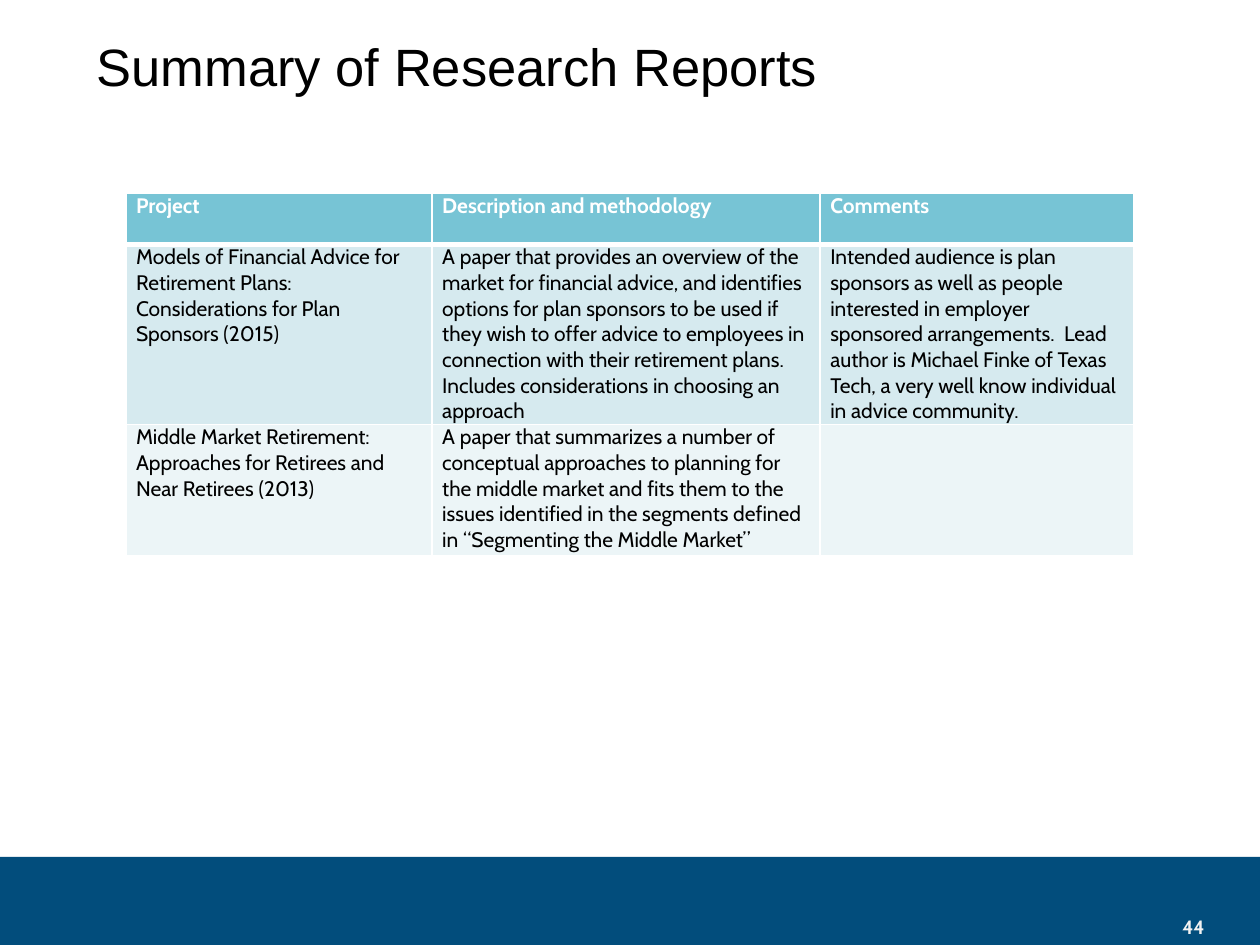
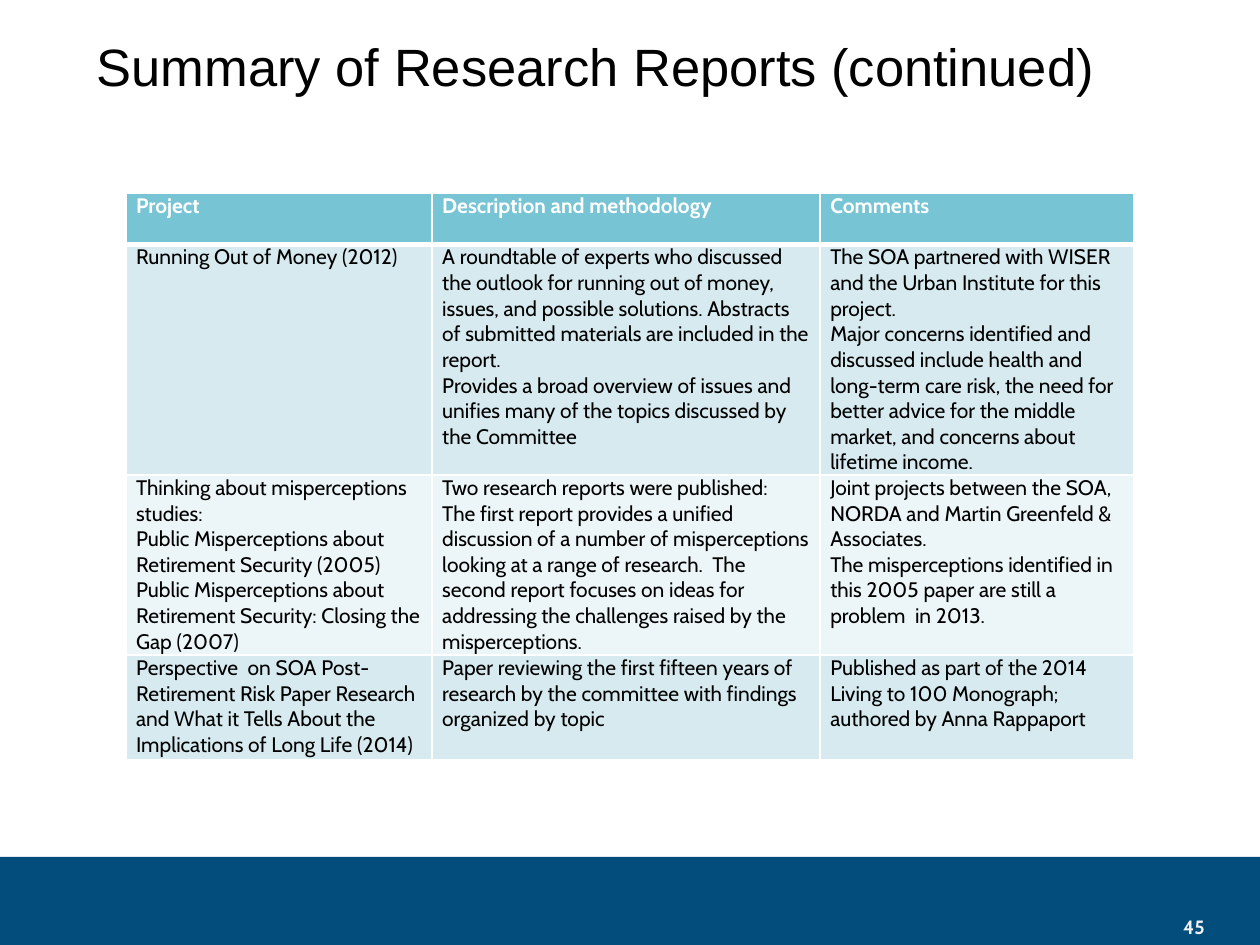
from lxml import etree
from pptx import Presentation
from pptx.dml.color import RGBColor
from pptx.enum.shapes import MSO_SHAPE
from pptx.enum.text import MSO_ANCHOR, PP_ALIGN
from pptx.oxml.ns import qn
from pptx.util import Inches, Pt

RECTANGLE = MSO_SHAPE.RECTANGLE
TOP, MIDDLE, BOTTOM = MSO_ANCHOR.TOP, MSO_ANCHOR.MIDDLE, MSO_ANCHOR.BOTTOM
LEFT, RIGHT = PP_ALIGN.LEFT, PP_ALIGN.RIGHT

BLACK = RGBColor(0x00, 0x00, 0x00)
WHITE = RGBColor(0xFF, 0xFF, 0xFF)
PALE_GRAY = RGBColor(0xF2, 0xF2, 0xF2)
NAVY = RGBColor(0x02, 0x4D, 0x7C)
TEAL = RGBColor(0x77, 0xC4, 0xD5)
BANDS = [RGBColor(0xD6, 0xEA, 0xEF), RGBColor(0xEC, 0xF5, 0xF7)]

TITLE_FONT = "Arial"
BODY_FONT = "Cabin"
COLUMN_WIDTHS = [2.43, 3.08, 2.49]
HEADER_HEIGHT = 0.41
HEADINGS = ["Project", "Description and methodology", "Comments"]

REPORT_PAGES = [
    ("Summary of Research Reports", 44, [
        (1.43, [
            ["Models of Financial Advice for Retirement Plans: Considerations for Plan Sponsors (2015)"],
            ["A paper that provides an overview of the market for financial advice, and identifies "
             "options for plan sponsors to be used if they wish to offer advice to employees in "
             "connection with their retirement plans.  Includes considerations in choosing an approach"],
            ["Intended audience is plan sponsors as well as people interested in employer sponsored "
             "arrangements.  Lead author is Michael Finke of Texas Tech, a very well know individual "
             "in advice community."],
        ]),
        (1.04, [
            ["Middle Market Retirement: Approaches for Retirees and Near Retirees (2013)"],
            ["A paper that summarizes a number of conceptual approaches to planning for the middle "
             "market and fits them to the issues identified in the segments defined in “Segmenting "
             "the Middle Market”"],
            [],
        ]),
    ]),
    ("Summary of Research Reports (continued)", 45, [
        (1.83, [
            ["Running Out of Money (2012)"],
            ["A roundtable of experts who discussed the outlook for running out of money, issues, and "
             "possible solutions. Abstracts of submitted materials are included in the report.",
             "Provides a broad overview of issues and unifies many of the topics discussed by the "
             "Committee"],
            ["The SOA partnered with WISER and the Urban Institute for this project.",
             "Major concerns identified and discussed include health and long-term care risk, the need "
             "for better advice for the middle market, and concerns about lifetime income."],
        ]),
        (1.43, [
            ["Thinking about misperceptions studies:",
             "Public Misperceptions about Retirement Security (2005)",
             "Public Misperceptions about Retirement Security: Closing the Gap (2007)"],
            ["Two research reports were published:",
             "The first report provides a unified discussion of a number of misperceptions looking at "
             "a range of research.  The second report focuses on ideas for addressing the challenges "
             "raised by the misperceptions."],
            ["Joint projects between the SOA, NORDA and Martin Greenfeld & Associates.",
             "The misperceptions identified in this 2005 paper are still a problem  in 2013."],
        ]),
        (0.83, [
            ["Perspective  on SOA Post-Retirement Risk Paper Research and What it Tells About the "
             "Implications of Long Life (2014)"],
            ["Paper reviewing the first fifteen years of research by the committee with findings "
             "organized by topic"],
            ["Published as part of the 2014 Living to 100 Monograph; authored by Anna Rappaport"],
        ]),
    ]),
]


def write_text(frame, paragraphs, font=BODY_FONT, size=12, color=BLACK, bold=False,
               align=LEFT, anchor=TOP, line_spacing=1.0):
    frame.word_wrap = True
    frame.vertical_anchor = anchor
    for index, text in enumerate(paragraphs):
        para = frame.paragraphs[0] if index == 0 else frame.add_paragraph()
        para.alignment = align
        para.line_spacing = line_spacing
        span = para.add_run()
        span.text = text
        span.font.name = font
        span.font.size = Pt(size)
        span.font.bold = bold
        span.font.color.rgb = color


def add_borders(cell, top=1, bottom=1):
    properties = cell._tc.get_or_add_tcPr()
    for side, width in (("L", 1), ("R", 1), ("T", top), ("B", bottom)):
        line = etree.SubElement(properties, qn(f"a:ln{side}"), w=str(Pt(width)))
        fill = etree.SubElement(line, qn("a:solidFill"))
        etree.SubElement(fill, qn("a:srgbClr"), val=str(WHITE))


deck = Presentation()
deck.slide_width = Inches(10)
deck.slide_height = Inches(7.5)

for title, number, reports in REPORT_PAGES:
    page = deck.slides.add_slide(deck.slide_layouts[6])
    page.background.fill.solid()
    page.background.fill.fore_color.rgb = WHITE

    footer_band = page.shapes.add_shape(RECTANGLE, 0, Inches(6.8), Inches(10), Inches(0.7))
    footer_band.shadow.inherit = False
    footer_band.fill.solid()
    footer_band.fill.fore_color.rgb = NAVY
    footer_band.line.fill.background()

    number_box = page.shapes.add_textbox(Inches(7.33), Inches(7.17), Inches(2.33), Inches(0.33))
    write_text(number_box.text_frame, [str(number)], size=11, color=PALE_GRAY, bold=True,
               align=RIGHT, anchor=BOTTOM)

    title_box = page.shapes.add_textbox(Inches(0.67), Inches(0.1), Inches(8.83), Inches(0.9))
    write_text(title_box.text_frame, [title], font=TITLE_FONT, size=30, anchor=MIDDLE,
               line_spacing=0.9)

    rows = [(HEADER_HEIGHT, [[heading] for heading in HEADINGS])] + reports
    table_height = sum(height for height, _ in rows)
    table = page.shapes.add_table(len(rows), len(HEADINGS), Inches(1), Inches(1.53),
                                  Inches(sum(COLUMN_WIDTHS)), Inches(table_height)).table
    for column, width in zip(table.columns, COLUMN_WIDTHS):
        column.width = Inches(width)

    for row_index, (height, contents) in enumerate(rows):
        table.rows[row_index].height = Inches(height)
        is_header = row_index == 0
        for column_index, paragraphs in enumerate(contents):
            cell = table.cell(row_index, column_index)
            cell.margin_left = cell.margin_right = Inches(0.08)
            cell.margin_top = cell.margin_bottom = 0
            add_borders(cell, top=3 if row_index == 1 else 1, bottom=3 if is_header else 1)
            cell.fill.solid()
            cell.fill.fore_color.rgb = TEAL if is_header else BANDS[(row_index - 1) % 2]
            write_text(cell.text_frame, paragraphs, color=WHITE if is_header else BLACK,
                       bold=is_header)

deck.save("out.pptx")
